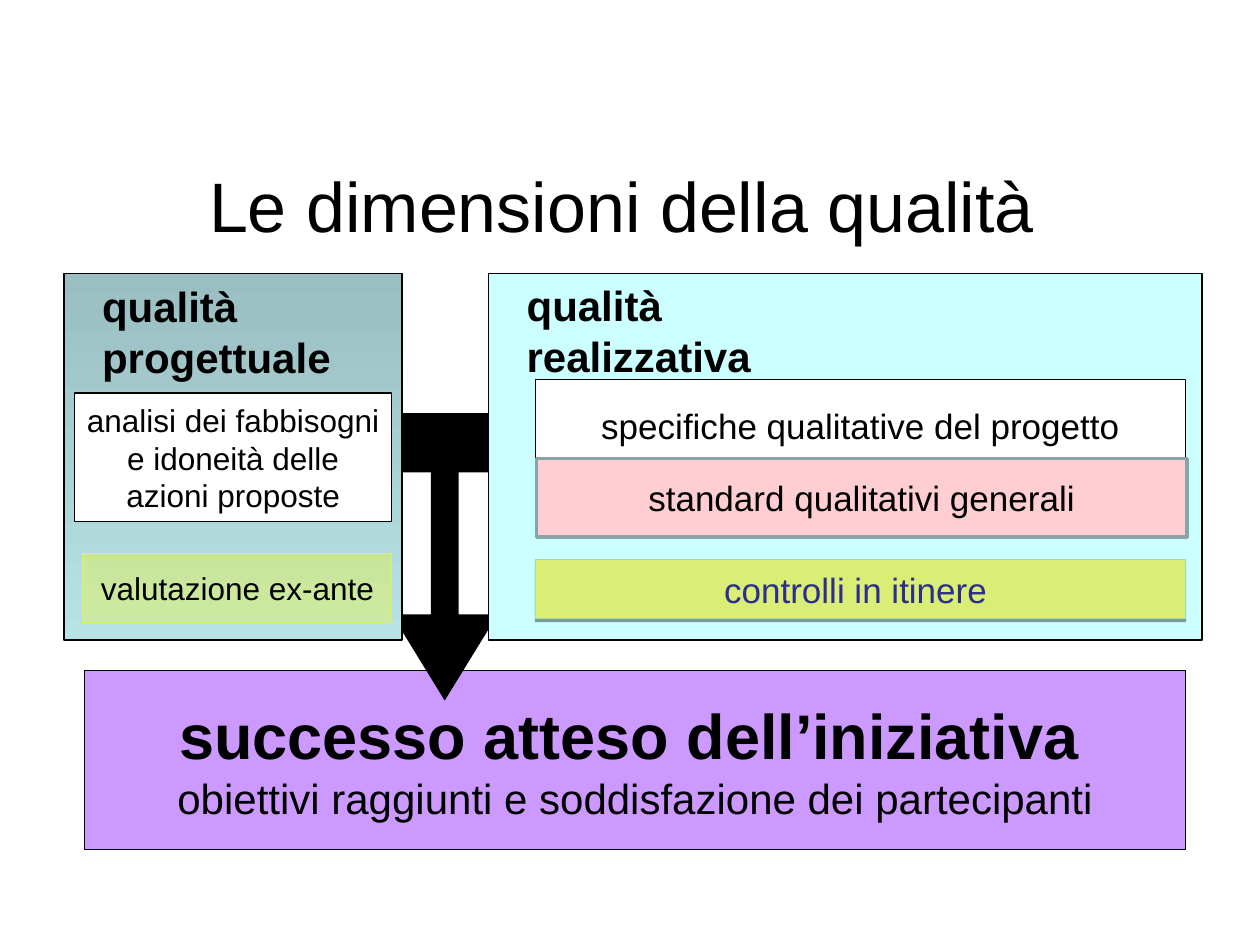
from lxml import etree
from pptx import Presentation
from pptx.dml.color import RGBColor
from pptx.enum import shapes, text
from pptx.oxml import ns
from pptx.util import Inches, Pt

BLACK = RGBColor(0x00, 0x00, 0x00)
WHITE = RGBColor(0xFF, 0xFF, 0xFF)
PURPLE = RGBColor(0xCC, 0x99, 0xFF)
CYAN = RGBColor(0xCC, 0xFF, 0xFF)
LIME = RGBColor(0xDA, 0xEE, 0x76)
GREEN = RGBColor(0xA4, 0xDC, 0xA5)
NAVY = RGBColor(0x2D, 0x2D, 0x8A)
TEAL = RGBColor(0x9A, 0xBE, 0xC1)
AQUA = RGBColor(0xB8, 0xE3, 0xE6)
YELLOW = RGBColor(0xFF, 0xFF, 0x00)
PINK = RGBColor(0xFE, 0xCE, 0xD3)
GREY = RGBColor(0x89, 0xA4, 0xA7)
RECT = shapes.MSO_SHAPE.RECTANGLE


def style(run, size, color=BLACK, bold=False):
    """Set the font of one run."""
    font = run.font
    font.name, font.size, font.bold = "Arial", Pt(size), bold
    font.color.rgb = color


def block(root, box, fill, line=None, width=0.75, kind=RECT):
    """Add a filled shape without a shadow."""
    shape = root.shapes.add_shape(kind, *map(Inches, box))
    shape.shadow.inherit = False
    shape.fill.solid()
    shape.fill.fore_color.rgb = fill
    if line is None:
        shape.line.fill.background()
    else:
        shape.line.color.rgb = line
        shape.line.width = Pt(width)
    return shape


def write(shape, lines, size, color=BLACK, bold=False, top=None, left=None):
    """Write lines centred, or from the given top and left insets."""
    frame = shape.text_frame
    frame.word_wrap = True
    frame.text = "\n".join(lines)
    frame.vertical_anchor = text.MSO_ANCHOR.MIDDLE
    if top is not None:
        frame.vertical_anchor = text.MSO_ANCHOR.TOP
        frame.margin_top = Inches(top)
    if left is not None:
        frame.margin_left = Inches(left)
    for para in frame.paragraphs:
        para.alignment = text.PP_ALIGN.CENTER if left is None else text.PP_ALIGN.LEFT
        for run in para.runs:
            style(run, size, color, bold)


def shade(shape):
    """Cast a thin shadow straight down."""
    effects = shape._element.spPr.find(ns.qn("a:effectLst"))
    outer = etree.SubElement(effects, ns.qn("a:outerShdw"), blurRad="0",
                             dist=str(Pt(1.6)), dir="5400000", rotWithShape="0")
    color = etree.SubElement(outer, ns.qn("a:srgbClr"), val=str(BLACK))
    etree.SubElement(color, ns.qn("a:alpha"), val="38000")


def title(slide, box):
    """Place the slide title."""
    label = slide.shapes.add_textbox(*map(Inches, box))
    write(label, ["Le dimensioni della qualità"], 40)


def result(slide, box):
    """Place the expected result panel."""
    panel = block(slide, box, PURPLE, BLACK)
    write(panel, ["successo atteso dell’iniziativa",
                  "obiettivi raggiunti e soddisfazione dei partecipanti"], 24)
    head = panel.text_frame.paragraphs[0]
    style(head.runs[0], 36, bold=True)
    gap = head.add_run()
    gap.text = " "
    style(gap, 24)


def arrow(slide, box):
    """Place the bar and the arrow that lead to the result."""
    x, y, w, h = box
    group = slide.shapes.add_group_shape()
    stem = block(group, (x + 0.16, y + 0.19, 0.84, h - 0.19), BLACK,
                 kind=shapes.MSO_SHAPE.DOWN_ARROW)
    stem.adjustments[0] = 0.262
    stem.adjustments[1] = 0.814
    block(group, (x, y, w, 0.47), BLACK)


def build(slide, box):
    """Place the panel on the quality of delivery."""
    x, y, w, h = box
    left, wide = x + 0.37, w - 0.5
    panel = block(slide, box, CYAN, BLACK)
    write(panel, ["qualità", "realizzativa"], 24, bold=True, top=0.05, left=0.3)
    specs = block(slide, (left, y + 0.84, wide, 1.24), WHITE, BLACK)
    write(specs, ["specifiche qualitative del progetto"], 20, top=0.2)
    checks = block(slide, (left, y + 2.27, wide, 0.47), LIME, GREEN)
    shade(checks)
    write(checks, ["controlli in itinere "], 20, NAVY)
    norms = block(slide, (left + 0.01, y + 1.47, wide, 0.62), PINK, GREY, 2)
    write(norms, ["standard qualitativi generali"], 20)


def design(slide, box):
    """Place the panel on the quality of design."""
    x, y, w, h = box
    panel = block(slide, box, TEAL, BLACK, 1)
    panel.fill.gradient()
    panel.fill.gradient_angle = 270
    for stop, color in zip(panel.fill.gradient_stops, (TEAL, AQUA)):
        stop.color.rgb = color
    write(panel, ["qualità", "progettuale"], 24, bold=True, top=0.06, left=0.3)
    review = block(slide, (x + 0.15, y + 2.22, w - 0.23, 0.55), YELLOW, LIME)
    tint = review._element.spPr.find(ns.qn("a:solidFill"))[0]
    etree.SubElement(tint, ns.qn("a:alpha"), val="30000")
    write(review, ["valutazione ex-ante"], 18)
    needs = block(slide, (x + 0.08, y + 0.95, w - 0.16, 1.02), WHITE, BLACK)
    write(needs, ["analisi dei fabbisogni e idoneità delle azioni proposte"], 18)


def main():
    """Build and save the slide."""
    deck = Presentation()
    deck.slide_width, deck.slide_height = Inches(10), Inches(7.5)
    slide = deck.slides.add_slide(deck.slide_layouts[6])
    result(slide, (0.67, 5.32, 8.74, 1.42))
    arrow(slide, (2.95, 3.28, 1.1, 2.28))
    title(slide, (0.43, 1, 9, 1.25))
    build(slide, (3.88, 2.17, 5.66, 2.91))
    design(slide, (0.51, 2.17, 2.68, 2.91))
    deck.save("out.pptx")


if __name__ == "__main__":
    main()
